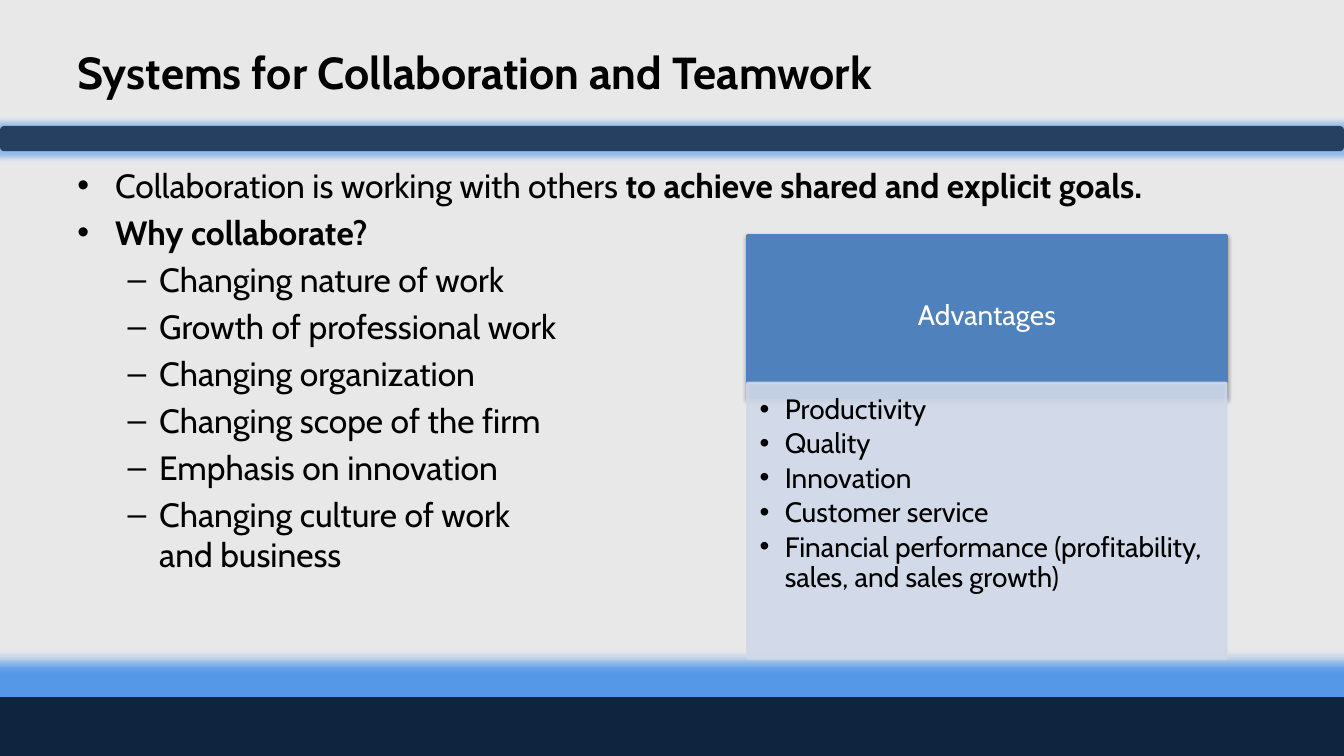
from lxml.etree import SubElement
from pptx import Presentation
from pptx.dml.color import RGBColor
from pptx.enum.shapes import MSO_SHAPE as Shape
from pptx.enum.text import MSO_ANCHOR as Anchor, MSO_AUTO_SIZE as AutoSize, PP_ALIGN as Align
from pptx.oxml.ns import qn
from pptx.util import Pt

BLACK = RGBColor(0x00, 0x00, 0x00)
WHITE = RGBColor(0xFF, 0xFF, 0xFF)
BACKGROUND = RGBColor(0xE8, 0xE8, 0xE8)
NAVY = RGBColor(0x0F, 0x24, 0x3E)
BAR_BLUE = RGBColor(0x25, 0x40, 0x61)
GLOW_BLUE = RGBColor(0x55, 0x98, 0xE8)
HEADER_BLUE = RGBColor(0x4F, 0x81, 0xBD)
PANEL_BLUE = RGBColor(0xD0, 0xD8, 0xE8)

FONT = "Cabin"
SLIDE_WIDTH, SLIDE_HEIGHT = 960, 540
CARD_LEFT, CARD_WIDTH = 534, 342

REASONS = [
    "Changing nature of work",
    "Growth of professional work",
    "Changing organization",
    "Changing scope of the firm",
    "Emphasis on innovation",
    "Changing culture of work \nand business",
]
ADVANTAGES = [
    "Productivity",
    "Quality",
    "Innovation",
    "Customer service",
    "Financial performance (profitability, sales, and sales growth)",
]


def add_color(parent, color, alpha):
    node = SubElement(parent, qn("a:srgbClr"), val=str(color))
    SubElement(node, qn("a:alpha"), val=str(alpha * 1000))


class SlideBuilder:
    def __init__(self, slide):
        self.slide = slide
        fill = slide.background.fill
        fill.solid()
        fill.fore_color.rgb = BACKGROUND

    def place(self, shape, left, top, width, height):
        shape.left, shape.top = Pt(left), Pt(top)
        shape.width, shape.height = Pt(width), Pt(height)

    def frame(self, shape, anchor, insets=(7.2, 3.6, 7.2, 3.6)):
        frame = shape.text_frame
        frame.word_wrap = True
        frame.auto_size = AutoSize.NONE
        frame.vertical_anchor = anchor
        (frame.margin_left, frame.margin_top,
         frame.margin_right, frame.margin_bottom) = map(Pt, insets)
        return frame

    def style(self, paragraph, size, color=BLACK, bold=False, align=Align.LEFT):
        paragraph.alignment = align
        font = paragraph.font
        font.name, font.size, font.bold = FONT, Pt(size), bold
        font.color.rgb = color

    def bullet(self, paragraph, mark, margin, hanging):
        properties = paragraph._p.get_or_add_pPr()
        properties.set("marL", str(Pt(margin)))
        properties.set("indent", str(-Pt(hanging)))
        font = properties.makeelement(qn("a:buFont"), {"typeface": "Arial"})
        character = properties.makeelement(qn("a:buChar"), {"char": mark})
        default_run = properties.find(qn("a:defRPr"))
        default_run.addprevious(font)
        default_run.addprevious(character)

    def title(self, text, *box):
        shape = self.slide.shapes.title
        self.place(shape, *box)
        frame = self.frame(shape, Anchor.MIDDLE)
        frame.text = text
        self.style(frame.paragraphs[0], 32, bold=True)

    def body(self, *box):
        shape = self.slide.placeholders[1]
        self.place(shape, *box)
        return self.frame(shape, Anchor.TOP)

    def body_item(self, paragraph, text, level=0, bold=False):
        paragraph.text = text
        paragraph.level = level
        paragraph.space_before = Pt(4.8)
        self.style(paragraph, 24, bold=bold)
        self.bullet(paragraph, *(("–", 58.5, 22.5) if level else ("•", 27, 27)))

    def box(self, kind, color, *box, alpha=100, outlined=False):
        shape = self.slide.shapes.add_shape(kind, *map(Pt, box))
        shape.shadow.inherit = False
        shape.fill.solid()
        shape.fill.fore_color.rgb = color
        fills = [shape.fill]
        if outlined:
            shape.line.width = Pt(2)
            shape.line.color.rgb = color
            fills.append(shape.line.fill)
        else:
            shape.line.fill.background()
        if alpha < 100:
            for node in shape._element.spPr.iter(qn("a:srgbClr")):
                SubElement(node, qn("a:alpha"), val=str(alpha * 1000))
        return shape

    def effect(self, shape, name, color, alpha, **lengths):
        """Add a glow or shadow to a shape."""
        effects = shape._element.spPr.find(qn("a:effectLst"))
        node = SubElement(effects, qn(name), {key: str(value) for key, value in lengths.items()})
        add_color(node, color, alpha)

    def glowing_bar(self, kind, color, top, height, radius):
        bar = self.box(kind, color, 0, top, SLIDE_WIDTH, height)
        self.effect(bar, "a:glow", GLOW_BLUE, 60 if radius < 15 else 100, rad=Pt(radius))

    def card_header(self, text, top, height):
        shape = self.box(Shape.RECTANGLE, HEADER_BLUE, CARD_LEFT, top, CARD_WIDTH, height,
                         outlined=True)
        self.effect(shape, "a:outerShdw", BLACK, 38, blurRad=Pt(3.1), dist=Pt(1.6),
                    dir=90 * 60000)
        frame = self.frame(shape, Anchor.MIDDLE, (11.5, 6.5, 11.5, 6.5))
        frame.text = text
        paragraph = frame.paragraphs[0]
        paragraph.line_spacing = 0.9
        self.style(paragraph, 20, WHITE, align=Align.CENTER)

    def card_list(self, items, top, height):
        shape = self.box(Shape.RECTANGLE, PANEL_BLUE, CARD_LEFT, top, CARD_WIDTH, height,
                         alpha=90, outlined=True)
        frame = self.frame(shape, Anchor.TOP, (8.6, 8.6, 11.5, 12.2))
        frame.text = "\n".join(items)
        for paragraph in frame.paragraphs:
            paragraph.line_spacing = 0.9
            paragraph.space_after = Pt(3)
            self.style(paragraph, 20)
            self.bullet(paragraph, "•", 18, 18)


def main():
    presentation = Presentation()
    presentation.slide_width, presentation.slide_height = Pt(SLIDE_WIDTH), Pt(SLIDE_HEIGHT)
    builder = SlideBuilder(presentation.slides.add_slide(presentation.slide_layouts[1]))

    builder.glowing_bar(Shape.RECTANGLE, NAVY, 498, 42, 18)
    builder.glowing_bar(Shape.ROUNDED_RECTANGLE, BAR_BLUE, 90, 18, 8)
    builder.title("Systems for Collaboration and Teamwork", 48, 24, 756, 54)

    body = builder.body(48, 114, 864, 356)
    definition = body.paragraphs[0]
    builder.body_item(definition, "Collaboration is working with others ")
    goal = definition.add_run()
    goal.text = "to achieve shared and explicit goals."
    goal.font.bold = True
    builder.body_item(body.add_paragraph(), "Why collaborate?", bold=True)
    for reason in REASONS:
        builder.body_item(body.add_paragraph(), reason.replace("\n", "\v"), level=1)

    builder.card_header("Advantages", 168, 116)
    builder.card_list(ADVANTAGES, 273.6, 196.6)
    presentation.save("out.pptx")


if __name__ == "__main__":
    main()
